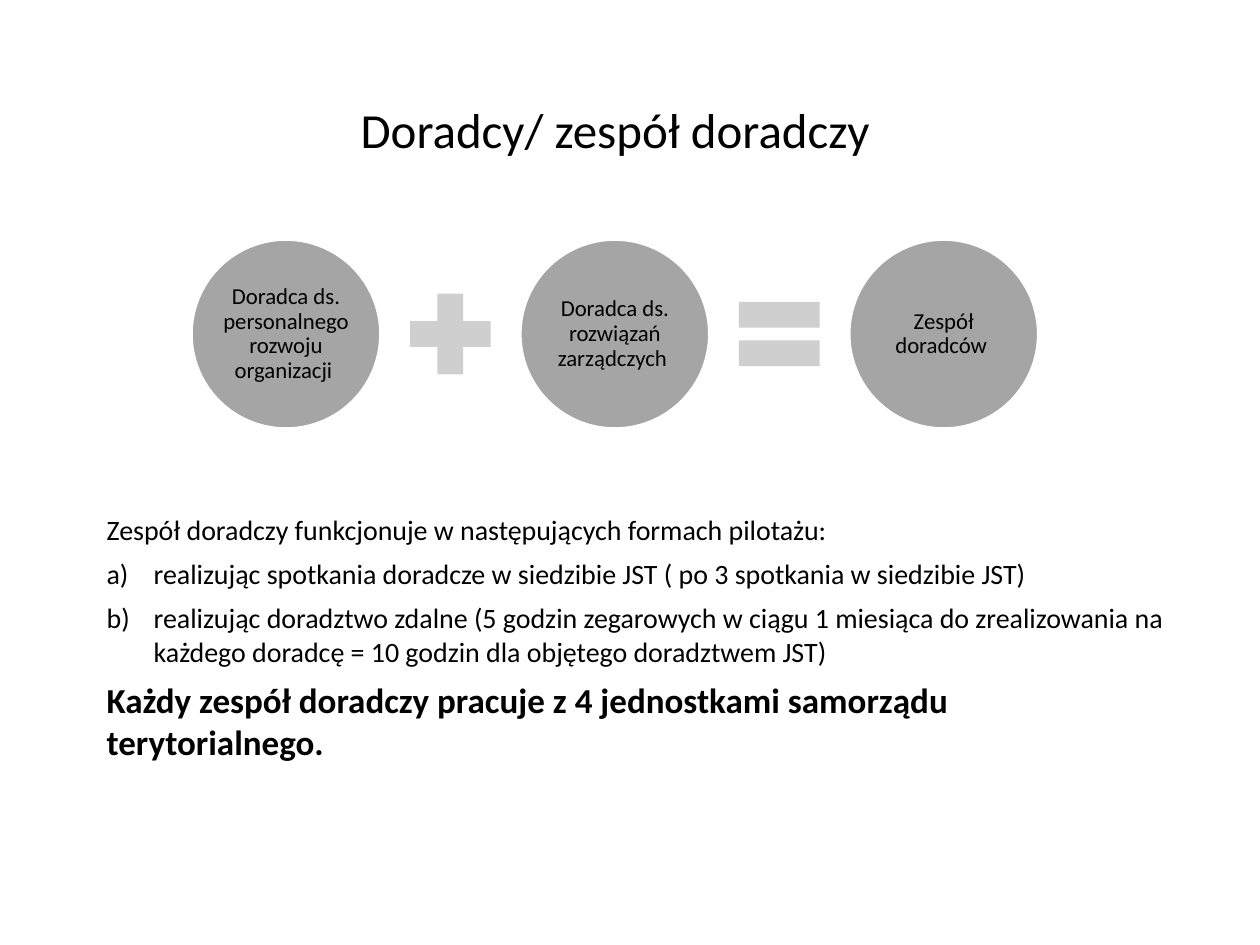
from lxml import etree
from pptx import Presentation
from pptx import util as u
from pptx.dml.color import RGBColor
from pptx.enum import shapes, text
from pptx.oxml.ns import qn


def color(value):
    return RGBColor.from_string(value)


def add_span(para, words, size, bold=False):
    span = para.add_run()
    span.text = words
    span.font.name = "Calibri"
    span.font.size = u.Pt(size)
    span.font.bold = bold
    span.font.color.rgb = color("000000")


deck = Presentation()
deck.slide_width = u.Cm(25.4)
deck.slide_height = u.Cm(19.05)
page = deck.slides.add_slide(deck.slide_layouts[6])

advisers = [
    "Doradca ds. personalnego rozwoju organizacji ",
    "Doradca ds. rozwiązań zarządczych ",
    "Zespół doradców ",
]
operators = [shapes.MSO_SHAPE.MATH_PLUS, shapes.MSO_SHAPE.MATH_EQUAL]
circle_left, circle_top, circle_size, step = 3.86, 4.83, 3.81, 6.63
sign_size = 2.21
sign_shift = (circle_size + step - sign_size) / 2
sign_top = circle_top + (circle_size - sign_size) / 2

for index, label in enumerate(advisers):
    left = circle_left + index * step
    circle = page.shapes.add_shape(
        shapes.MSO_SHAPE.OVAL, u.Cm(left), u.Cm(circle_top), u.Cm(circle_size), u.Cm(circle_size)
    )
    circle.shadow.inherit = False
    circle.fill.solid()
    circle.fill.fore_color.rgb = color("A5A5A5")
    circle.line.color.rgb = color("FFFFFF")
    circle.line.width = u.Pt(1.5)
    frame = circle.text_frame
    frame.word_wrap = True
    frame.vertical_anchor = text.MSO_ANCHOR.MIDDLE
    frame.margin_left = frame.margin_right = u.Cm(0.05)
    frame.margin_top = frame.margin_bottom = u.Cm(0.05)
    para = frame.paragraphs[0]
    para.alignment = text.PP_ALIGN.CENTER
    para.line_spacing = 0.9
    add_span(para, label, 13)

for index, kind in enumerate(operators):
    sign = page.shapes.add_shape(
        kind,
        u.Cm(circle_left + index * step + sign_shift),
        u.Cm(sign_top),
        u.Cm(sign_size),
        u.Cm(sign_size),
    )
    sign.shadow.inherit = False
    sign.fill.solid()
    sign.fill.fore_color.rgb = color("CFCFCF")
    sign.line.fill.background()

title_box = page.shapes.add_textbox(u.Cm(3.66), u.Cm(1.88), u.Cm(17.7), u.Cm(1.45))
title_box.text_frame.word_wrap = True
title_box.text_frame.auto_size = text.MSO_AUTO_SIZE.SHAPE_TO_FIT_TEXT
title = title_box.text_frame.paragraphs[0]
title.alignment = text.PP_ALIGN.CENTER
add_span(title, "Doradcy/ zespół doradczy ", 28)

body_lines = [
    ("Zespół doradczy funkcjonuje w następujących formach pilotażu:", 16, False, False),
    ("realizując spotkania doradcze w siedzibie JST ( po 3 spotkania w siedzibie JST)", 16, False, True),
    (
        "realizując doradztwo zdalne (5 godzin zegarowych w ciągu 1 miesiąca do zrealizowania na "
        "każdego doradcę = 10 godzin dla objętego doradztwem JST)",
        16, False, True,
    ),
    ("Każdy zespół doradczy pracuje z 4 jednostkami samorządu terytorialnego.", 20, True, False),
]
body_box = page.shapes.add_textbox(u.Cm(1.9), u.Cm(10.21), u.Cm(22), u.Cm(4.5))
body = body_box.text_frame
body.word_wrap = True
body.auto_size = text.MSO_AUTO_SIZE.SHAPE_TO_FIT_TEXT
for index, (words, size, bold, lettered) in enumerate(body_lines):
    para = body.add_paragraph() if index else body.paragraphs[0]
    if index:
        para.space_before = u.Pt(6)
    if lettered:
        properties = para._p.get_or_add_pPr()
        properties.set("marL", str(u.Cm(0.95)))
        properties.set("indent", str(-u.Cm(0.95)))
        etree.SubElement(properties, qn("a:buFont"), typeface="+mj-lt")
        etree.SubElement(properties, qn("a:buAutoNum"), type="alphaLcParenR")
    add_span(para, words, size, bold)

deck.save("out.pptx")
